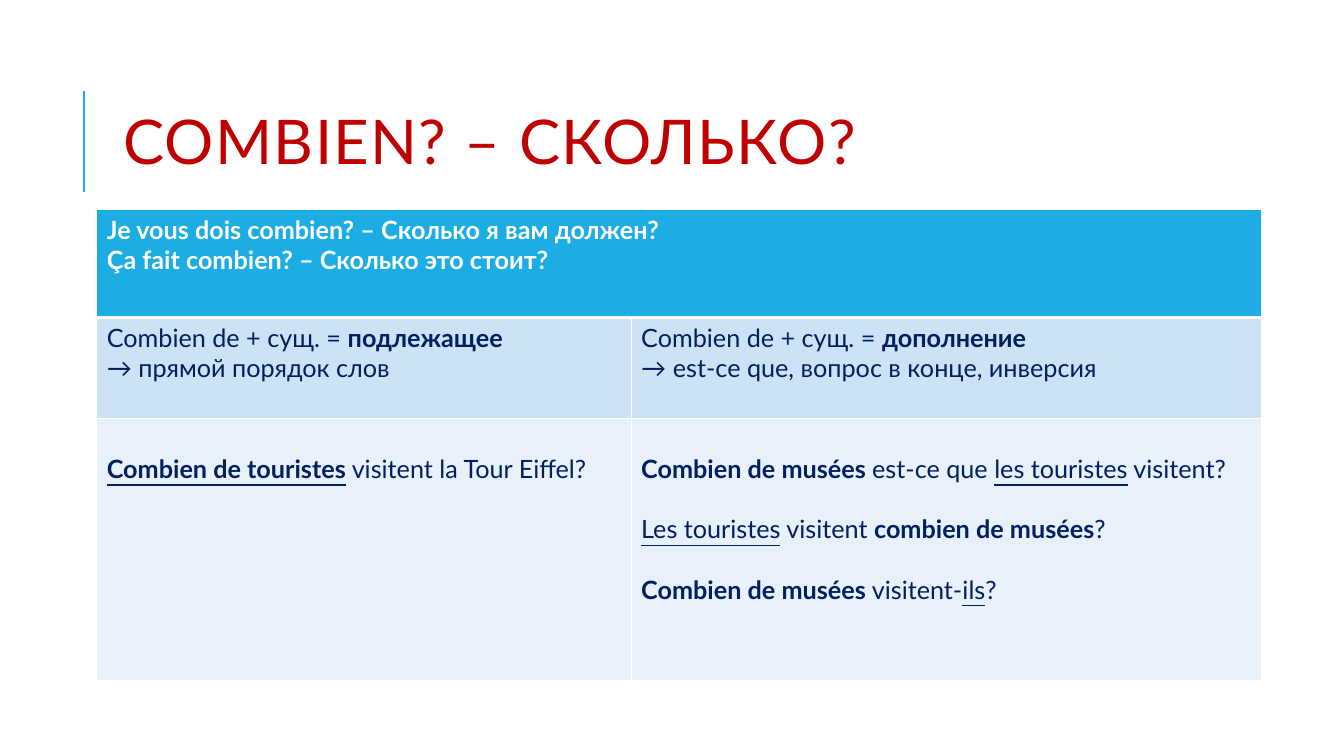
from typing import NamedTuple

from lxml import etree
from pptx import Presentation
from pptx.dml.color import RGBColor
from pptx.enum import shapes, text
from pptx.oxml import ns
from pptx.util import Inches, Pt

FONT = "Lato"
COLORS = {
    "accent": "1CADE4",
    "title": "C00000",
    "ink": "002060",
    "white": "FFFFFF",
    "rule_band": "CDE3F5",
    "example_band": "E8F1FA",
}


class Span(NamedTuple):
    text: str
    bold: bool = False
    underline: bool = False


class Cell(NamedTuple):
    row: int
    column: int
    paragraphs: list[list[Span]]


class RowStyle(NamedTuple):
    height: float
    fill: str
    ink: str
    line_spacing: float
    top_border: int
    bottom_border: int


COLUMN_WIDTHS = [5.3, 6.25]
ROWS = [
    RowStyle(1.07, "accent", "white", 1, 1, 3),
    RowStyle(1, "rule_band", "ink", 1, 3, 1),
    RowStyle(2.6, "example_band", "ink", 2, 1, 1),
]
CELLS = [
    Cell(0, 0, [
        [Span("Je vous dois combien? – Сколько я вам должен?", bold=True)],
        [Span("Ça fait combien? – Сколько это стоит?", bold=True)],
    ]),
    Cell(1, 0, [
        [Span("Combien de + сущ. = "), Span("подлежащее", bold=True)],
        [Span("→ прямой порядок слов")],
    ]),
    Cell(1, 1, [
        [Span("Combien de + сущ. = "), Span("дополнение", bold=True)],
        [Span("→ est-ce que, вопрос в конце, инверсия")],
    ]),
    Cell(2, 0, [
        [Span("Combien de touristes", bold=True, underline=True),
         Span(" visitent la Tour Eiffel?")],
    ]),
    Cell(2, 1, [
        [Span("Combien de musées ", bold=True), Span("est-ce que "),
         Span("les touristes", underline=True), Span(" visitent?")],
        [Span("Les touristes", underline=True), Span(" visitent "),
         Span("combien de musées", bold=True), Span("?")],
        [Span("Combien de musées", bold=True), Span(" visitent-"),
         Span("ils", underline=True), Span("?")],
    ]),
]


def rgb(name: str) -> RGBColor:
    return RGBColor.from_string(COLORS[name])


def style_font(font, size: float, color: str) -> None:
    font.name = FONT
    font.size = Pt(size)
    font.color.rgb = rgb(color)


def add_title(page) -> None:
    title = page.shapes.title
    title.left, title.top = Inches(1.12), Inches(0.64)
    title.width, title.height = Inches(10.63), Inches(1.64)
    frame = title.text_frame
    frame.text = "COMBIEN? – СКОЛЬКО?"
    frame.auto_size = text.MSO_AUTO_SIZE.NONE
    frame.vertical_anchor = text.MSO_ANCHOR.MIDDLE
    para = frame.paragraphs[0]
    para.alignment = text.PP_ALIGN.LEFT
    para.line_spacing = 0.8
    span = para.runs[0]
    style_font(span.font, 44, "title")
    span.font._element.set("spc", "100")


def add_accent_line(page) -> None:
    line = page.shapes.add_connector(
        shapes.MSO_CONNECTOR.STRAIGHT,
        Inches(0.83), Inches(1.9), Inches(0.83), Inches(0.9))
    line.line.color.rgb = rgb("accent")
    line.line.width = Pt(1.5)
    etree.SubElement(line._element.spPr, ns.qn("a:effectLst"))


def style_cell(cell, style: RowStyle) -> None:
    properties = cell._tc.get_or_add_tcPr()
    borders = {"lnL": 1, "lnR": 1, "lnT": style.top_border, "lnB": style.bottom_border}
    for side, width in borders.items():
        border = etree.SubElement(properties, ns.qn(f"a:{side}"), w=str(Pt(width)))
        fill = etree.SubElement(border, ns.qn("a:solidFill"))
        etree.SubElement(fill, ns.qn("a:srgbClr"), val=COLORS["white"])
    cell.fill.solid()
    cell.fill.fore_color.rgb = rgb(style.fill)


def write_cell(cell, paragraphs: list[list[Span]], style: RowStyle) -> None:
    frame = cell.text_frame
    for index, spans in enumerate(paragraphs):
        para = frame.add_paragraph() if index else frame.paragraphs[0]
        para.line_spacing = float(style.line_spacing)
        for span in spans:
            run = para.add_run()
            run.text = span.text
            style_font(run.font, 18, style.ink)
            run.font.bold = span.bold
            run.font.underline = span.underline


def add_grammar_table(page) -> None:
    table = page.shapes.add_table(
        len(ROWS), len(COLUMN_WIDTHS), Inches(0.96), Inches(2.08),
        Inches(sum(COLUMN_WIDTHS)), Inches(sum(row.height for row in ROWS))).table
    for column, width in zip(table.columns, COLUMN_WIDTHS):
        column.width = Inches(width)
    for row, style in zip(table.rows, ROWS):
        row.height = Inches(style.height)
        for cell in row.cells:
            style_cell(cell, style)
    table.cell(0, 0).merge(table.cell(0, 1))
    for content in CELLS:
        write_cell(table.cell(content.row, content.column),
                   content.paragraphs, ROWS[content.row])


def main() -> None:
    deck = Presentation()
    deck.slide_width, deck.slide_height = Inches(13.33), Inches(7.5)
    page = deck.slides.add_slide(deck.slide_layouts.get_by_name("Title Only"))
    add_accent_line(page)
    add_title(page)
    add_grammar_table(page)
    deck.save("out.pptx")


if __name__ == "__main__":
    main()
